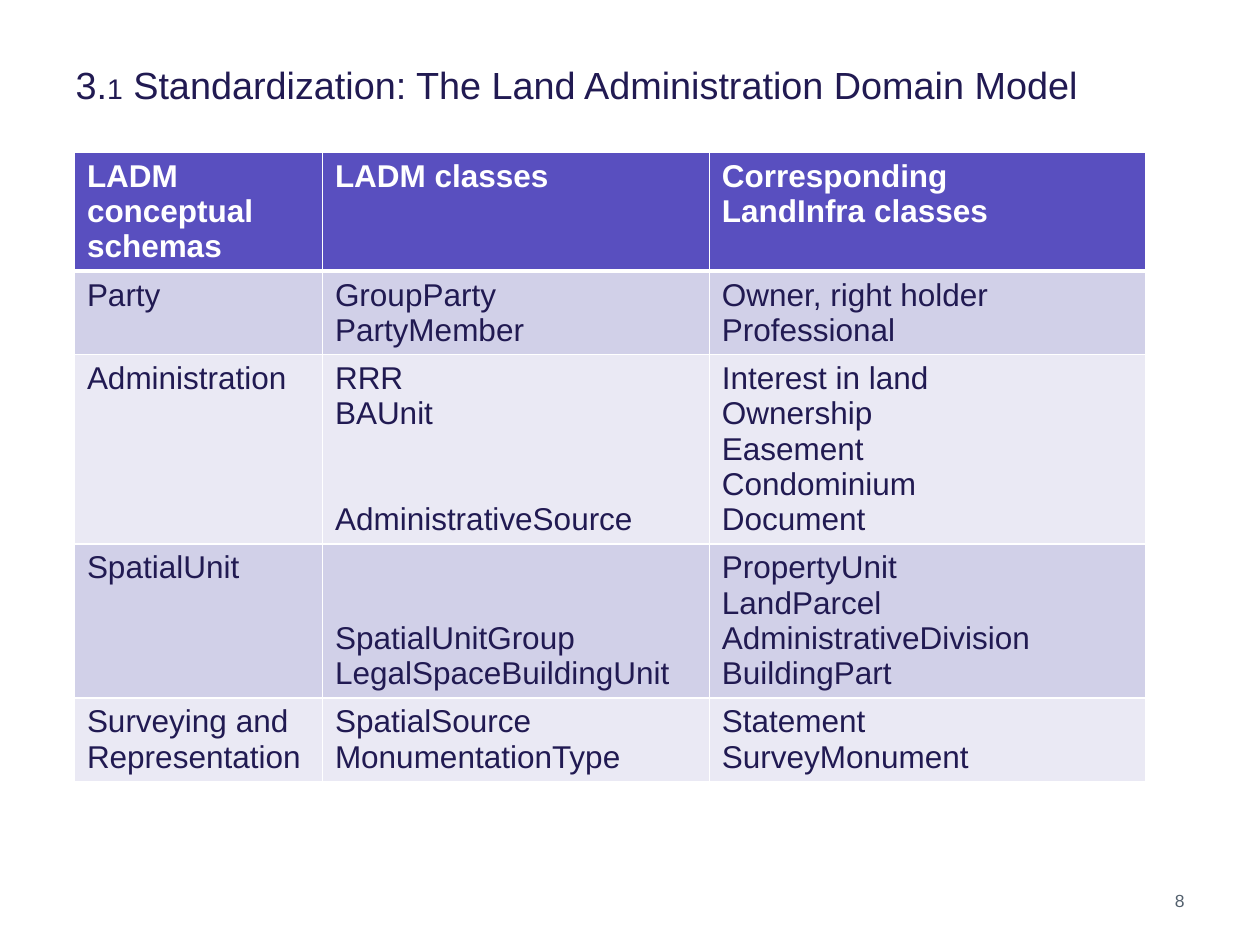
from lxml import etree
from pptx import Presentation
from pptx import util as u
from pptx.dml.color import RGBColor
from pptx.enum import text
from pptx.oxml.ns import qn

COLORS = {
    "ink": "211A52",
    "header": "594FBF",
    "band_dark": "D1D0E8",
    "band_light": "EAE9F4",
    "white": "FFFFFF",
    "number": "54616E",
}
FONT = "Arial"
LINE_HEIGHT = 0.71
CELL_PADDING = 0.13
COLUMN_WIDTHS = [5, 7.8, 8.8]

ROWS = [
    (["LADM", "conceptual schemas"], ["LADM classes"],
     ["Corresponding", "LandInfra classes"]),
    (["Party"], ["GroupParty", "PartyMember"],
     ["Owner, right holder", "Professional"]),
    (["Administration"], ["RRR", "BAUnit", "AdministrativeSource"],
     ["Interest in land", "Ownership", "Easement", "Condominium", "Document"]),
    (["SpatialUnit"], ["SpatialUnitGroup", "LegalSpaceBuildingUnit"],
     ["PropertyUnit", "LandParcel", "AdministrativeDivision", "BuildingPart"]),
    (["Surveying and Representation"], ["SpatialSource", "MonumentationType"],
     ["Statement", "SurveyMonument"]),
]
ROW_LINES = [3, 2, 5, 4, 2]


class SlideBuilder:
    def __init__(self, slide):
        self.slide = slide

    def style(self, font, size, color, bold=False):
        font.name = FONT
        font.size = u.Pt(size)
        font.bold = bold
        font.color.rgb = RGBColor.from_string(COLORS[color])

    def title(self, parts, left, top, width, height):
        shape = self.slide.shapes.title
        shape.left, shape.top = u.Cm(left), u.Cm(top)
        shape.width, shape.height = u.Cm(width), u.Cm(height)
        frame = shape.text_frame
        frame.auto_size = text.MSO_AUTO_SIZE.NONE
        frame.vertical_anchor = text.MSO_ANCHOR.MIDDLE
        frame.margin_bottom = u.Cm(1)
        paragraph = frame.paragraphs[0]
        paragraph.alignment = text.PP_ALIGN.LEFT
        for words, size in parts:
            run = paragraph.add_run()
            run.text = words
            self.style(run.font, size, "ink")

    def borders(self, cell, bottom_width):
        properties = cell._tc.get_or_add_tcPr()
        for side, width in (("L", 1), ("R", 1), ("T", 1), ("B", bottom_width)):
            line = etree.SubElement(properties, qn("a:ln" + side), w=str(u.Pt(width)))
            fill = etree.SubElement(line, qn("a:solidFill"))
            etree.SubElement(fill, qn("a:srgbClr"), val=COLORS["white"])

    def cell(self, cell, lines, is_header, fill):
        self.borders(cell, 3 if is_header else 1)
        cell.fill.solid()
        cell.fill.fore_color.rgb = RGBColor.from_string(COLORS[fill])
        cell.margin_top = cell.margin_bottom = u.Cm(CELL_PADDING)
        cell.text_frame.text = "\n".join(lines)
        for paragraph in cell.text_frame.paragraphs:
            self.style(paragraph.runs[0].font, 18,
                       "white" if is_header else "ink", is_header)

    def table(self, rows, left, top):
        heights = [count * LINE_HEIGHT + 2 * CELL_PADDING for count in ROW_LINES]
        table = self.slide.shapes.add_table(
            len(rows), len(COLUMN_WIDTHS), u.Cm(left), u.Cm(top),
            u.Cm(sum(COLUMN_WIDTHS)), u.Cm(sum(heights))).table
        for column, width in zip(table.columns, COLUMN_WIDTHS):
            column.width = u.Cm(width)
        for index, (row, height) in enumerate(zip(rows, heights)):
            table.rows[index].height = u.Cm(height)
            band = "band_dark" if index % 2 else "band_light"
            for column, lines in enumerate(row):
                self.cell(table.cell(index, column), lines, index == 0,
                          band if index else "header")
        return table

    def page_number(self, number, left, top, width, height):
        shape = self.slide.shapes.add_textbox(
            u.Cm(left), u.Cm(top), u.Cm(width), u.Cm(height))
        frame = shape.text_frame
        frame.word_wrap = True
        frame.vertical_anchor = text.MSO_ANCHOR.MIDDLE
        paragraph = frame.paragraphs[0]
        paragraph.text = number
        paragraph.alignment = text.PP_ALIGN.RIGHT
        self.style(paragraph.runs[0].font, 10, "number")


def main():
    presentation = Presentation()
    presentation.slide_width, presentation.slide_height = u.Cm(25.4), u.Cm(19.05)
    builder = SlideBuilder(
        presentation.slides.add_slide(presentation.slide_layouts[5]))
    builder.title(
        [("3.", 21.6), ("1", 16.2),
         (" Standardization: The Land Administration Domain Model", 21.6)],
        1.27, 0.76, 22.86, 2.77)
    table = builder.table(ROWS, 1.5, 3.07)
    source_class = table.cell(2, 1).text_frame.paragraphs[2]
    source_class.space_before = u.Cm(2 * LINE_HEIGHT)
    table.cell(3, 1).margin_top = u.Cm(CELL_PADDING + 2 * LINE_HEIGHT)
    builder.page_number("8", 18.21, 17.65, 5.92, 1.02)
    presentation.save("out.pptx")


if __name__ == "__main__":
    main()
